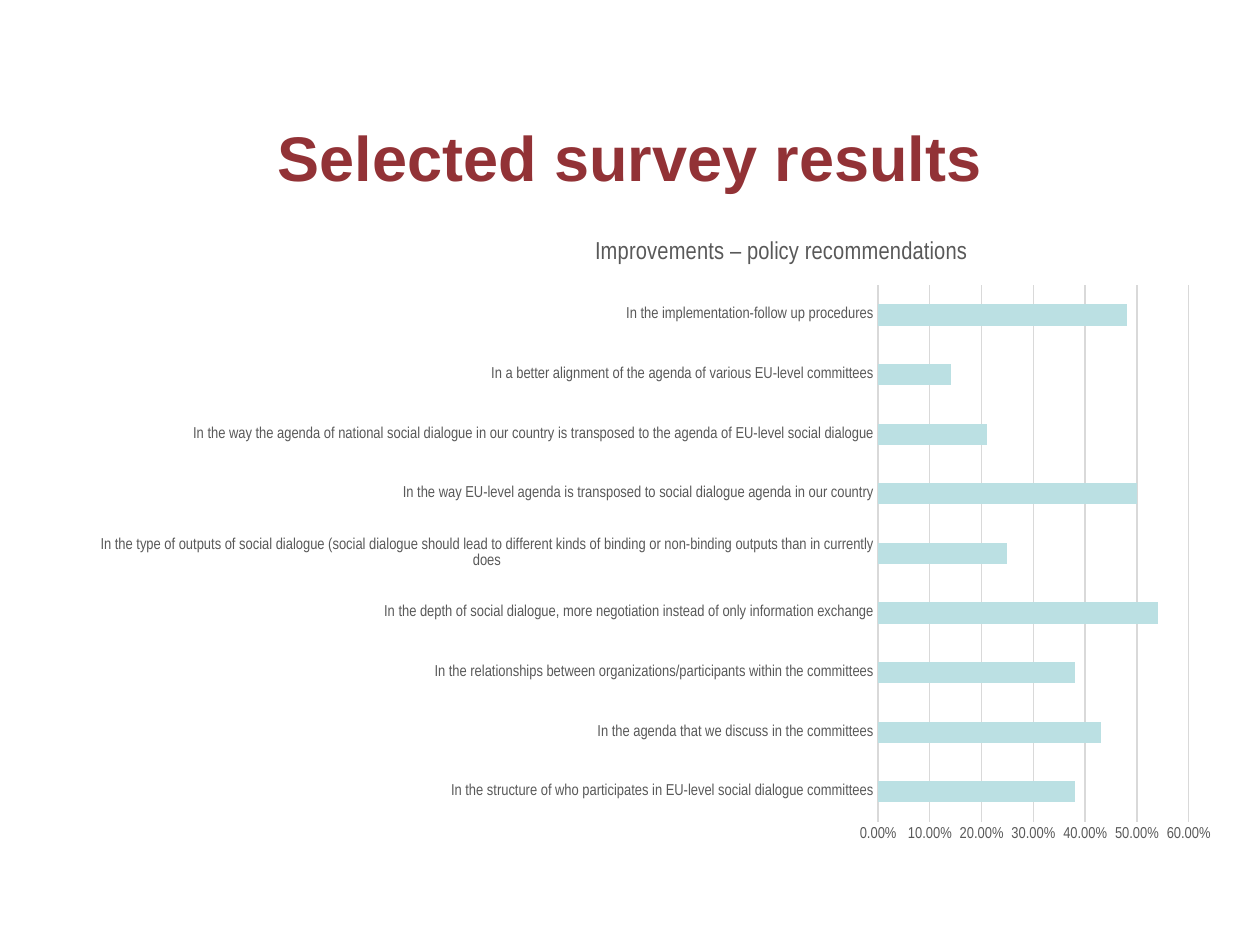
from pptx import Presentation
from pptx.chart.data import CategoryChartData
from pptx.dml.color import RGBColor
from pptx.enum.chart import XL_CHART_TYPE, XL_TICK_MARK
from pptx.enum.dml import MSO_FILL
from pptx.enum.text import MSO_ANCHOR, PP_ALIGN
from pptx.oxml import parse_xml
from pptx.oxml.ns import nsdecls
from pptx.util import Pt

BAR_CLUSTERED = XL_CHART_TYPE.BAR_CLUSTERED
NO_TICK = XL_TICK_MARK.NONE
MIDDLE = MSO_ANCHOR.MIDDLE
CENTER = PP_ALIGN.CENTER

THEME = {
    "heading": {"name": "Arial", "size": Pt(36), "bold": True, "color": "923236"},
    "chart_title": {"name": "Arial Narrow", "size": Pt(14), "bold": False, "color": "595959"},
    "axis": {"name": "Arial Narrow", "size": Pt(9), "bold": False, "color": "595959"},
    "bar": RGBColor.from_string("BBE0E3"),
    "grid": RGBColor.from_string("D9D9D9"),
}

RESULTS = [
    ("In the structure of who participates in EU-level social dialogue committees", 0.38),
    ("In the agenda that we discuss in the committees", 0.43),
    ("In the relationships between organizations/participants within the committees", 0.38),
    ("In the depth of social dialogue, more negotiation instead of only information exchange", 0.54),
    ("In the type of outputs of social dialogue (social dialogue should lead to different kinds "
     "of binding or non-binding outputs than in currently does", 0.25),
    ("In the way EU-level agenda is transposed to social dialogue agenda in our country", 0.5),
    ("In the way the agenda of national social dialogue in our country is transposed "
     "to the agenda of EU-level social dialogue", 0.21),
    ("In a better alignment of the agenda of various EU-level committees", 0.14),
    ("In the implementation-follow up procedures", 0.48),
]


def style_font(font, style):
    for name, value in style.items():
        if name == "color":
            font.color.rgb = RGBColor.from_string(value)
        else:
            setattr(font, name, value)


def place(element, target, **fractions):
    """Fix the position of a chart part, in fractions of the chart area."""
    inner = '<c:layoutTarget val="inner"/>' if target == "inner" else ""
    modes = "".join(f'<c:{key}Mode val="edge"/>' for key in ("x", "y"))
    sizes = "".join(f'<c:{key} val="{value}"/>' for key, value in fractions.items())
    for old in element.findall("{*}layout"):
        element.remove(old)
    layout = parse_xml(f'<c:layout {nsdecls("c")}><c:manualLayout>{inner}{modes}{sizes}'
                       '</c:manualLayout></c:layout>')
    element.insert(1 if target == "title" else 0, layout)


deck = Presentation()
deck.slide_width, deck.slide_height = Pt(720), Pt(540)
page = deck.slides.add_slide(deck.slide_layouts[6])

# Heading
box = page.shapes.add_textbox(Pt(36), Pt(66.24), Pt(648), Pt(46.08))
frame = box.text_frame
frame.word_wrap = True
frame.vertical_anchor = MIDDLE
para = frame.paragraphs[0]
para.alignment = CENTER
span = para.add_run()
span.text = "Selected survey results"
style_font(span.font, THEME["heading"])

# Survey chart
data = CategoryChartData(number_format="0.00%")
data.categories = [label for label, share in RESULTS]
data.add_series("Series 1", [share for label, share in RESULTS])
chart = page.shapes.add_chart(BAR_CLUSTERED, Pt(48.24), Pt(122.4), Pt(657.36), Pt(369.36), data).chart
chart.has_legend = False
style_font(chart.font, THEME["axis"])

# Chart title
title_para = chart.chart_title.text_frame.paragraphs[0]
title_span = title_para.add_run()
title_span.text = "Improvements – policy recommendations"
style_font(title_span.font, THEME["chart_title"])
place(chart.chart_title._element, "title", x=0.44, y=0.03)

# Bars
plot = chart.plots[0]
plot.gap_width = 182
plot.vary_by_categories = False
bar_fill = plot.series[0].format.fill
bar_fill.solid()
bar_fill.fore_color.rgb = THEME["bar"]
place(chart._chartSpace.chart.plotArea, "inner", x=0.69, y=0.11, w=0.27, h=0.83)

# Axes
for axis in (chart.category_axis, chart.value_axis):
    axis.major_tick_mark = axis.minor_tick_mark = NO_TICK
    style_font(axis.tick_labels.font, THEME["axis"])
chart.value_axis.minimum_scale = 0
chart.value_axis.maximum_scale = 0.6
chart.value_axis.major_unit = 0.1
chart.value_axis.tick_labels.number_format = "0.00%"
chart.value_axis.tick_labels.number_format_is_linked = False
chart.value_axis.format.line.fill.background()
chart.value_axis.has_major_gridlines = True
for line in (chart.category_axis.format.line, chart.value_axis.major_gridlines.format.line):
    line.color.rgb = THEME["grid"]
    line.width = Pt(0.75)

deck.save("out.pptx")
